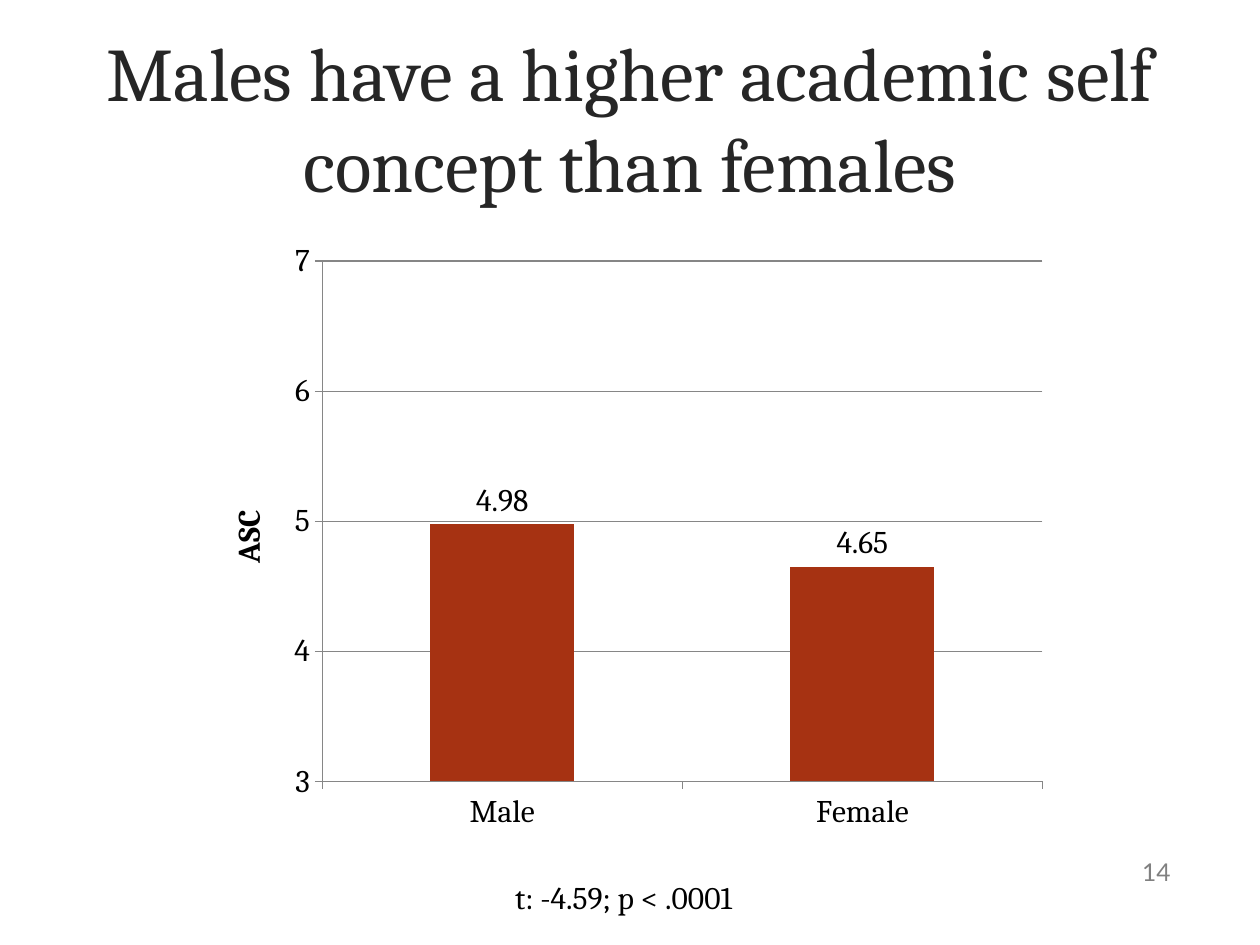
"""Build a slide comparing the academic self concept of males and females."""
import dataclasses

import pptx
import pptx.chart.data
import pptx.dml.color
import pptx.enum.chart
import pptx.enum.text
import pptx.util

ALIGN = pptx.enum.text.PP_ALIGN
ANCHOR = pptx.enum.text.MSO_ANCHOR


@dataclasses.dataclass(frozen=True)
class Theme:
    """Hold the colours, fonts and type sizes of the slide."""

    serif: str = "Cambria"
    sans: str = "Lato"
    heading: str = "262626"
    body: str = "000000"
    muted: str = "808080"
    bar: str = "A63212"
    grid: str = "868686"
    heading_size: float = 43.2
    body_size: float = 18
    number_size: float = 14


THEME = Theme()
WIDTH = pptx.util.Inches(10)
HEIGHT = pptx.util.Inches(7.5)


def rgb(value):
    """Return the colour for a hex string."""
    return pptx.dml.color.RGBColor.from_string(value)


def area(left, top, width, height):
    """Turn shares of the slide's size into lengths."""
    return (int(left * WIDTH), int(top * HEIGHT),
            int(width * WIDTH), int(height * HEIGHT))


def style_font(font, size, color=THEME.body, name=THEME.serif, bold=False):
    """Set the face, size, colour and weight of a font."""
    font.name = name
    font.size = pptx.util.Pt(size)
    font.bold = bold
    font.color.rgb = rgb(color)


def add_text(slide, text, box, *, align=ALIGN.LEFT, anchor=ANCHOR.TOP,
             wrap=True, **font_format):
    """Add a one-paragraph text box."""
    frame = slide.shapes.add_textbox(*area(*box)).text_frame
    frame.word_wrap = wrap
    frame.vertical_anchor = anchor
    paragraph = frame.paragraphs[0]
    paragraph.alignment = align
    run = paragraph.add_run()
    run.text = text
    style_font(run.font, **font_format)


def style_axis(axis):
    """Give an axis its line, outward ticks and label font."""
    axis.major_tick_mark = pptx.enum.chart.XL_TICK_MARK.OUTSIDE
    axis.minor_tick_mark = pptx.enum.chart.XL_TICK_MARK.NONE
    axis.format.line.color.rgb = rgb(THEME.grid)
    style_font(axis.tick_labels.font, THEME.body_size)


def style_score_axis(axis, title, low, high):
    """Scale the score axis in whole steps and add its title and grid."""
    style_axis(axis)
    axis.minimum_scale = low
    axis.maximum_scale = high
    axis.major_unit = 1
    axis.tick_labels.number_format = "General"
    axis.tick_labels.number_format_is_linked = False
    axis.has_major_gridlines = True
    axis.major_gridlines.format.line.color.rgb = rgb(THEME.grid)
    axis.has_title = True
    axis.axis_title.text_frame.text = title
    heading = axis.axis_title.text_frame.paragraphs[0].runs[0]
    style_font(heading.font, THEME.body_size, bold=True)


def add_score_chart(slide, scores, box):
    """Add the column chart of mean scores by group."""
    data = pptx.chart.data.CategoryChartData()
    data.categories = list(scores)
    data.add_series("Series 1", list(scores.values()))
    chart = slide.shapes.add_chart(
        pptx.enum.chart.XL_CHART_TYPE.COLUMN_CLUSTERED, *area(*box), data
    ).chart
    chart.has_title = False
    chart.has_legend = False
    style_font(chart.font, THEME.body_size)
    style_axis(chart.category_axis)
    style_score_axis(chart.value_axis, "ASC", low=3, high=7)

    plot = chart.plots[0]
    plot.gap_width = 150
    plot.vary_by_categories = False
    bars = plot.series[0]
    bars.format.fill.solid()
    bars.format.fill.fore_color.rgb = rgb(THEME.bar)
    labels = bars.data_labels
    labels.show_value = True
    labels.position = pptx.enum.chart.XL_LABEL_POSITION.OUTSIDE_END
    style_font(labels.font, THEME.body_size)


def main():
    """Build and save the slide."""
    deck = pptx.Presentation()
    deck.slide_width, deck.slide_height = WIDTH, HEIGHT
    slide = deck.slides.add_slide(deck.slide_layouts[6])

    add_text(slide, "Males have a higher academic self concept than females",
             (0.05, 0.04, 0.9, 0.167), align=ALIGN.CENTER,
             anchor=ANCHOR.MIDDLE, size=THEME.heading_size,
             color=THEME.heading)
    add_text(slide, "t: -4.59; p < .0001", (0.399, 0.923, 0.201, 0.053),
             wrap=False, size=THEME.body_size)
    add_score_chart(slide, {"Male": 4.98, "Female": 4.65},
                    (0.158, 0.244, 0.683, 0.648))
    add_text(slide, "14", (0.706, 0.896, 0.233, 0.053), align=ALIGN.RIGHT,
             anchor=ANCHOR.MIDDLE, size=THEME.number_size,
             color=THEME.muted, name=THEME.sans)

    deck.save("out.pptx")


if __name__ == "__main__":
    main()
